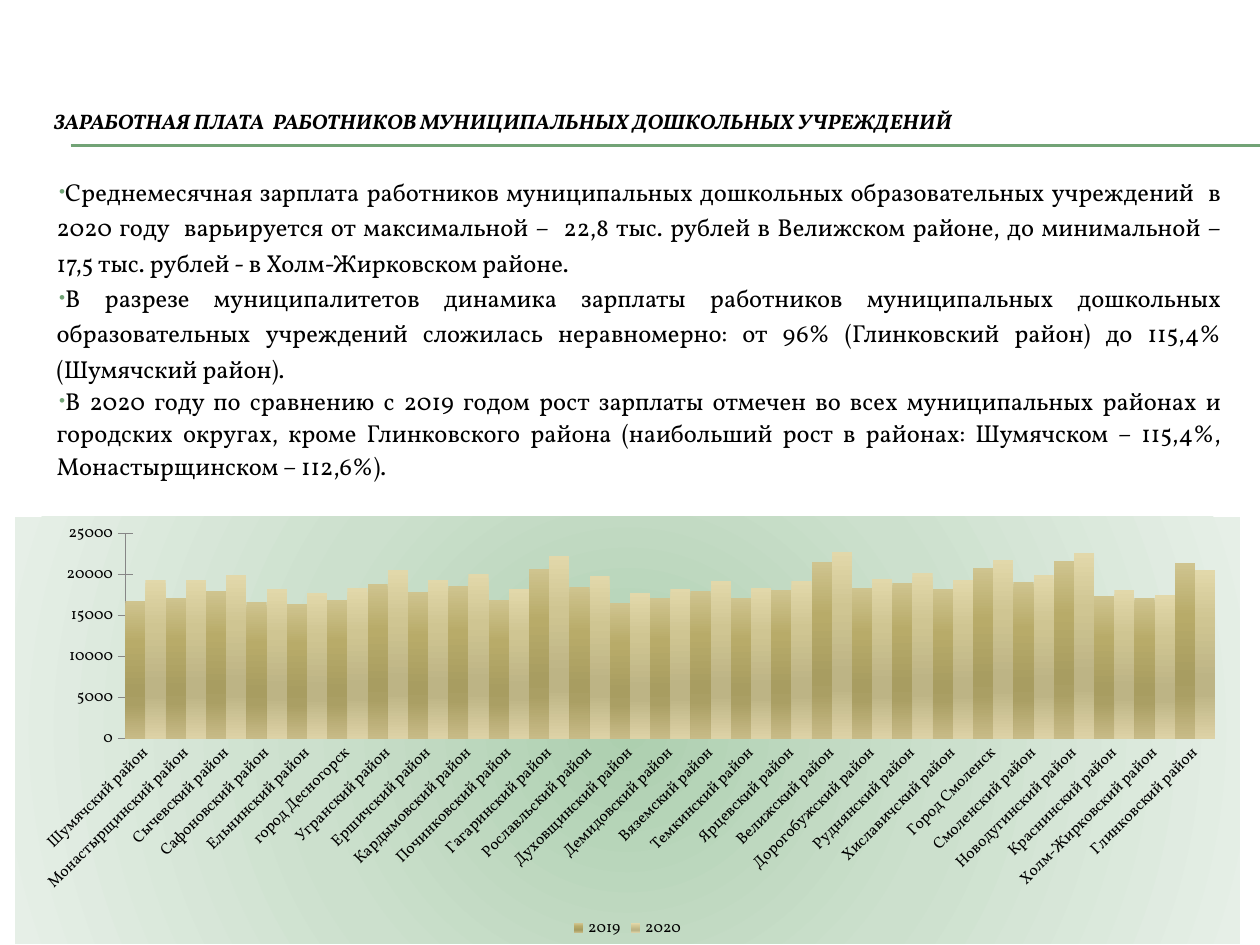
"""Builds a slide on wages in municipal preschools with a district column chart."""
import pptx
import pptx.chart.data
import pptx.dml.color
import pptx.enum.chart
import pptx.enum.shapes
import pptx.enum.text
import pptx.oxml
import pptx.oxml.ns
import pptx.util

RGBColor = pptx.dml.color.RGBColor
Inches, Pt = pptx.util.Inches, pptx.util.Pt
BLACK = RGBColor(0x00, 0x00, 0x00)
GREEN = RGBColor(0x72, 0xA3, 0x76)
GRAY = RGBColor(0x86, 0x86, 0x86)
FONT = "Vollkorn"
WIDTH, HEIGHT = 10, 7.5
NAMESPACES = pptx.oxml.ns.nsdecls("a", "c")

TITLE = "ЗАРАБОТНАЯ ПЛАТА  РАБОТНИКОВ МУНИЦИПАЛЬНЫХ ДОШКОЛЬНЫХ УЧРЕЖДЕНИЙ"
BULLETS = [
    ("Среднемесячная зарплата работников муниципальных дошкольных образовательных учреждений  в 2020 году  "
     "варьируется от максимальной –  22,8 тыс. рублей в Велижском районе, до минимальной – 17,5 тыс. рублей "
     "- в Холм-Жирковском районе.", 1.2),
    ("В разрезе муниципалитетов динамика зарплаты работников муниципальных дошкольных образовательных "
     "учреждений сложилась неравномерно: от 96% (Глинковский район) до 115,4% (Шумячский район).", 1.2),
    ("В 2020 году по сравнению с 2019 годом рост зарплаты отмечен во всех муниципальных районах и городских "
     "округах, кроме Глинковского района (наибольший рост в районах: Шумячском – 115,4%, "
     "Монастырщинском – 112,6%).", 1.1),
]
WAGES = [
    ("Шумячский район", 16800, 19400),
    ("Монастырщинский район", 17200, 19400),
    ("Сычевский район", 18000, 19900),
    ("Сафоновский район", 16600, 18200),
    ("Ельнинский район", 16400, 17800),
    ("город Десногорск", 16900, 18400),
    ("Угранский район", 18900, 20500),
    ("Ершичский район", 17900, 19400),
    ("Кардымовский район", 18600, 20100),
    ("Починковский район", 16900, 18200),
    ("Гагаринский район", 20700, 22300),
    ("Рославльский район", 18500, 19800),
    ("Духовщинский район", 16500, 17700),
    ("Демидовский район", 17100, 18300),
    ("Вяземский район", 18000, 19200),
    ("Темкинский район", 17200, 18400),
    ("Ярцевский район", 18100, 19200),
    ("Велижский район", 21500, 22800),
    ("Дорогобужский район", 18400, 19500),
    ("Руднянский район", 19000, 20200),
    ("Хиславичский район", 18300, 19300),
    ("Город Смоленск", 20800, 21800),
    ("Смоленский район", 19100, 20000),
    ("Новодугинский район", 21600, 22600),
    ("Краснинский район", 17400, 18100),
    ("Холм-Жирковский район", 17200, 17500),
    ("Глинковский район", 21400, 20500),
]
LINEAR = '<a:lin ang="5400000" scaled="0"/>'
RADIAL = '<a:path path="circle"><a:fillToRect l="50000" t="50000" r="50000" b="50000"/></a:path>'
SERIES_STOPS = {
    "2019": [(0, "CFC48F"), (30, "B8AB69"), (65, "A89D61"), (75, "AA9F64"), (100, "C8BB87")],
    "2020": [(0, "E2D8AA"), (30, "CFC592"), (65, "BDB485"), (75, "C0B788"), (100, "DDD2A6")],
}
BACKGROUND_STOPS = [(0, "ADCFAF"), (50, "CCE0CD"), (100, "E6EFE7")]
PLOT_AREA = {"x": 0.09, "y": 0.04, "w": 0.89, "h": 0.48}


def set_values(target, values):
    for name, value in values.items():
        setattr(target, name, value)


def style_font(font, size, **extra):
    set_values(font, {"name": FONT, "size": Pt(size), **extra})
    font.color.rgb = BLACK


def gradient(stops, direction):
    marks = "".join(f'<a:gs pos="{share * 1000}"><a:srgbClr val="{color}"/></a:gs>' for share, color in stops)
    return f'<a:gradFill {NAMESPACES} rotWithShape="1"><a:gsLst>{marks}</a:gsLst>{direction}</a:gradFill>'


def place(shape, left, top, width, height):
    set_values(shape, {"left": Inches(left), "top": Inches(top), "width": Inches(width), "height": Inches(height)})


def add_rules(slide):
    for top in (1.15, 1.16):
        rule = slide.shapes.add_connector(pptx.enum.shapes.MSO_CONNECTOR.STRAIGHT,
                                          Inches(0.56), Inches(top), Inches(WIDTH), Inches(top))
        rule.line.color.rgb = GREEN
        rule.line.width = Pt(0.75)
        rule._element.spPr.append(pptx.oxml.parse_xml(f"<a:effectLst {NAMESPACES}/>"))


def fill_text(slide):
    title, body = slide.placeholders
    place(title, 0.33, 0.5, 9.5, 0.92)
    place(body, 0.35, 1.31, 9.45, 2.83)
    anchors = pptx.enum.text.MSO_ANCHOR
    for shape, anchor in ((title, anchors.MIDDLE), (body, anchors.TOP)):
        set_values(shape.text_frame, {"word_wrap": True, "vertical_anchor": anchor,
                                      "auto_size": pptx.enum.text.MSO_AUTO_SIZE.NONE})
    heading = title.text_frame.paragraphs[0]
    heading.alignment = pptx.enum.text.PP_ALIGN.LEFT
    run = heading.add_run()
    run.text = TITLE
    style_font(run.font, 12, bold=True, italic=True)

    body.text_frame.text = "\n".join(text for text, spacing in BULLETS)
    for paragraph, (text, spacing) in zip(body.text_frame.paragraphs, BULLETS):
        set_values(paragraph, {"alignment": pptx.enum.text.PP_ALIGN.JUSTIFY, "line_spacing": spacing,
                               "space_before": Pt(0), "space_after": Pt(0)})
        properties = paragraph._p.get_or_add_pPr()
        properties.set("marL", "0")
        properties.set("indent", str(Inches(0.02)))
        for bullet in (f'<a:buClr {NAMESPACES}><a:srgbClr val="{GREEN}"/></a:buClr>',
                       f'<a:buSzPct {NAMESPACES} val="70000"/>',
                       f'<a:buChar {NAMESPACES} char="•"/>'):
            properties.append(pptx.oxml.parse_xml(bullet))
        style_font(paragraph.runs[0].font, 14)


def add_wage_chart(slide):
    names, *columns = zip(*WAGES)
    data = pptx.chart.data.CategoryChartData()
    data.categories = names
    for year, values in zip(SERIES_STOPS, columns):
        data.add_series(year, values)
    chart = slide.shapes.add_chart(pptx.enum.chart.XL_CHART_TYPE.COLUMN_CLUSTERED, Inches(0.12), Inches(4.1),
                                   Inches(9.72), Inches(3.39), data).chart
    set_values(chart, {"has_title": False, "has_legend": True})
    style_font(chart.font, 18)
    set_values(chart.legend, {"position": pptx.enum.chart.XL_LEGEND_POSITION.BOTTOM, "include_in_layout": False})
    style_font(chart.legend.font, 9)

    plot = chart.plots[0]
    set_values(plot, {"gap_width": 0, "overlap": 0, "vary_by_categories": False})
    for series in plot.series:
        properties = series._element.get_or_add_spPr()
        properties.insert(0, pptx.oxml.parse_xml(gradient(SERIES_STOPS[series.name], LINEAR)))

    ticks = pptx.enum.chart.XL_TICK_MARK
    category_axis, value_axis = chart.category_axis, chart.value_axis
    for axis, tick in ((category_axis, ticks.NONE), (value_axis, ticks.CROSS)):
        set_values(axis, {"major_tick_mark": tick, "minor_tick_mark": ticks.NONE, "has_major_gridlines": False})
        axis.format.line.color.rgb = GRAY
        axis.format.line.width = Pt(0.75)
        style_font(axis.tick_labels.font, 9)
    set_values(value_axis, {"minimum_scale": 0, "maximum_scale": 25000, "major_unit": 5000})
    category_axis._element.txPr.bodyPr.set("rot", str(-45 * 60000))

    chart_space = chart._chartSpace
    background = f"<c:spPr {NAMESPACES}>{gradient(BACKGROUND_STOPS, RADIAL)}<a:ln><a:noFill/></a:ln></c:spPr>"
    chart_space.txPr.addprevious(pptx.oxml.parse_xml(background))
    plot_area = chart_space.chart.plotArea
    for layout in plot_area.findall(pptx.oxml.ns.qn("c:layout")):
        plot_area.remove(layout)
    modes = "".join(f'<c:{side}Mode val="edge"/>' for side in "xy")
    shares = "".join(f'<c:{side} val="{share}"/>' for side, share in PLOT_AREA.items())
    plot_area.insert(0, pptx.oxml.parse_xml(
        f'<c:layout {NAMESPACES}><c:manualLayout><c:layoutTarget val="inner"/>{modes}{shares}'
        "</c:manualLayout></c:layout>"))


def main():
    presentation = pptx.Presentation()
    set_values(presentation, {"slide_width": Inches(WIDTH), "slide_height": Inches(HEIGHT)})
    slide = presentation.slides.add_slide(presentation.slide_layouts[1])
    add_rules(slide)
    fill_text(slide)
    add_wage_chart(slide)
    presentation.save("out.pptx")


if __name__ == "__main__":
    main()
